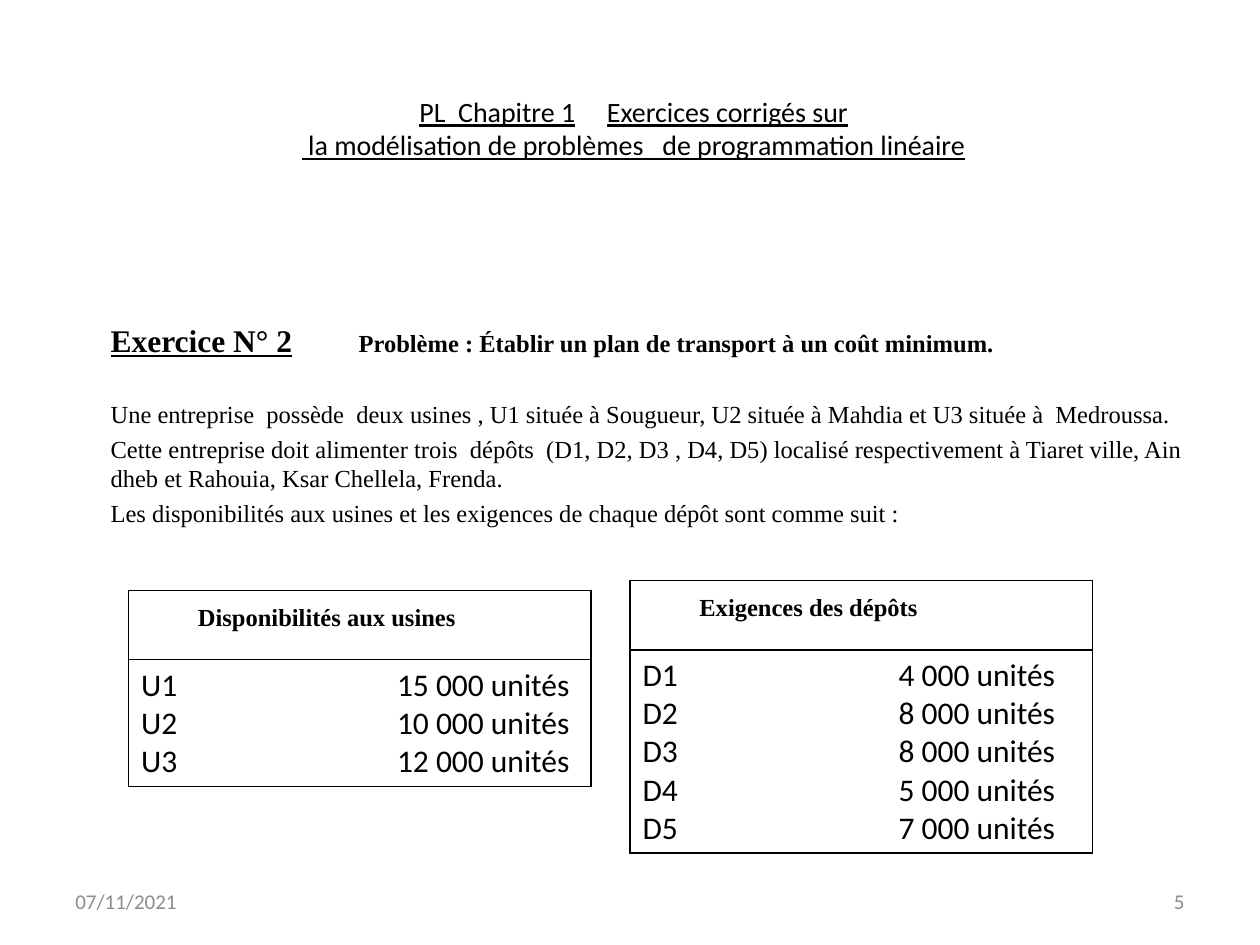
from lxml.etree import SubElement
from pptx import Presentation
from pptx.dml.color import RGBColor
from pptx.enum.text import MSO_ANCHOR as Anchor, MSO_AUTO_SIZE as AutoSize, PP_ALIGN as Align
from pptx.oxml.ns import qn
from pptx.util import Cm, Pt

BLACK = RGBColor(0x00, 0x00, 0x00)
WHITE = RGBColor(0xFF, 0xFF, 0xFF)
GREY = RGBColor(0x8C, 0x8C, 0x8C)
SANS, SERIF = "Calibri", "Times New Roman"


def format_runs(para, name, size, color=BLACK, bold=False):
    for span in para.runs:
        span.font.name = name
        span.font.size = Pt(size)
        span.font.color.rgb = color
        span.font.bold = bold


def add_tab_stop(para, position):
    stops = SubElement(para._p.get_or_add_pPr(), qn("a:tabLst"))
    SubElement(stops, qn("a:tab"), pos=str(position), algn="l")


deck = Presentation()
deck.slide_width, deck.slide_height = Cm(25.4), Cm(19.05)
page = deck.slides.add_slide(deck.slide_layouts[5])

# Title
title = page.shapes.title
title.left, title.top, title.width, title.height = Cm(1.98), Cm(0.79), Cm(21.59), Cm(3.58)
frame = title.text_frame
frame.auto_size = AutoSize.NONE
frame.vertical_anchor = Anchor.MIDDLE
para = frame.paragraphs[0]
para.alignment = Align.CENTER
for text, underlined in [
    ("PL  Chapitre 1", True),
    ("     ", False),
    ("Exercices corrigés sur", True),
    (None, True),
    (" la modélisation de problèmes   de programmation linéaire", True),
]:
    if text is None:
        para.add_line_break()
        continue
    span = para.add_run()
    span.text = text
    span.font.underline = underlined
format_runs(para, SANS, 16)

# Exercise statement
statement = page.shapes.add_textbox(Cm(1.98), Cm(6.35), Cm(22.43), Cm(4.95))
frame = statement.text_frame
frame.word_wrap = True
heading = frame.paragraphs[0]
heading.space_before = Pt(3)
for text in ["Exercice N° 2", "\tProblème : Établir un plan de transport à un coût minimum."]:
    heading.add_run().text = text
format_runs(heading, SERIF, 14, bold=True)
heading.runs[0].font.size = Pt(18)
heading.runs[0].font.underline = True
add_tab_stop(heading, Cm(5))

for text, gap in [
    ("Une entreprise  possède  deux usines , U1 située à Sougueur, U2 située à Mahdia "
     "et U3 située à  Medroussa.", 23),
    ("Cette entreprise doit alimenter trois  dépôts  (D1, D2, D3 , D4, D5) localisé "
     "respectivement à Tiaret ville, Ain dheb et Rahouia, Ksar Chellela, Frenda.", 3),
    ("Les disponibilités aux usines et les exigences de chaque dépôt sont comme suit :", 3),
]:
    para = frame.add_paragraph()
    para.text = text
    para.space_before = Pt(gap)
    format_runs(para, SERIF, 14)

# Supply and demand tables
supply = [("U1", "15 000"), ("U2", "10 000"), ("U3", "12 000")]
demand = [("D1", "4 000"), ("D2", "8 000"), ("D3", "8 000"), ("D4", "5 000"), ("D5", "7 000")]
for left, top, height, header, quantities in [
    (Cm(2.59), Cm(11.9), Cm(3.96), "Disponibilités aux usines", supply),
    (Cm(12.7), Cm(11.7), Cm(5.5), "Exigences des dépôts", demand),
]:
    table = page.shapes.add_table(2, 1, left, top, Cm(9.32), height).table
    table.first_row = table.horz_banding = False
    table.rows[0].height = Cm(1.4)
    table.rows[1].height = height - Cm(1.4)

    header_cell, list_cell = table.cell(0, 0), table.cell(1, 0)
    header_cell.margin_left = Cm(1.4)
    header_cell.margin_top = Cm(0.29)
    header_cell.text_frame.text = header
    format_runs(header_cell.text_frame.paragraphs[0], SERIF, 14, bold=True)

    list_cell.text_frame.text = "\n".join(f"{place}\t{amount} unités" for place, amount in quantities)
    for para in list_cell.text_frame.paragraphs:
        format_runs(para, SANS, 18)
        add_tab_stop(para, Cm(5.16))

    for cell in (header_cell, list_cell):
        properties = cell._tc.get_or_add_tcPr()
        for side in ("a:lnL", "a:lnR", "a:lnT", "a:lnB"):
            line = SubElement(properties, qn(side), w=str(Pt(1)))
            line_fill = SubElement(line, qn("a:solidFill"))
            SubElement(line_fill, qn("a:srgbClr"), val=str(BLACK))
        cell.fill.solid()
        cell.fill.fore_color.rgb = WHITE

# Footer
for left, text, alignment in [
    (Cm(1.27), "07/11/2021", Align.LEFT),
    (Cm(18.2), "5", Align.RIGHT),
]:
    box = page.shapes.add_textbox(left, Cm(17.66), Cm(5.93), Cm(1.01))
    frame = box.text_frame
    frame.word_wrap = True
    frame.vertical_anchor = Anchor.MIDDLE
    frame.text = text
    frame.paragraphs[0].alignment = alignment
    format_runs(frame.paragraphs[0], SANS, 12, GREY)

deck.save("out.pptx")
